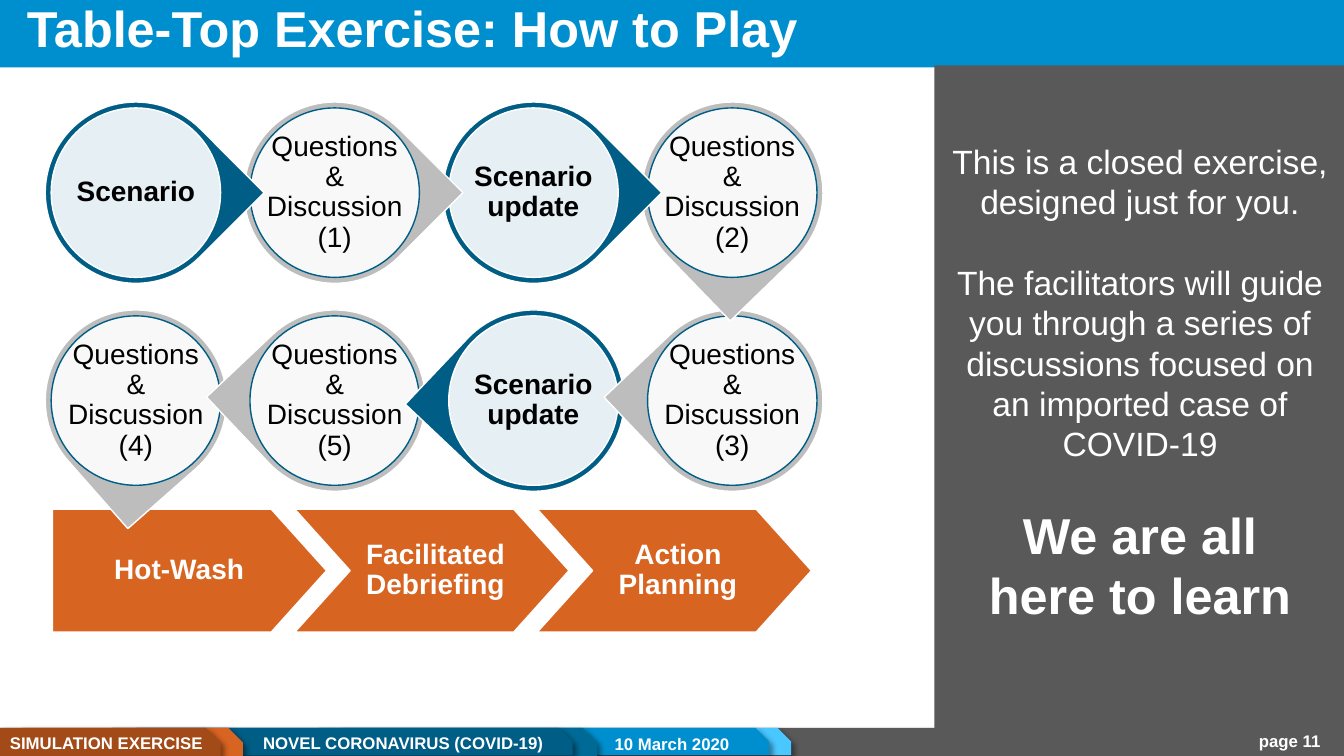
from pptx import Presentation
from pptx import util as u
from pptx.dml.color import RGBColor
from pptx.enum import shapes, text
from pptx.oxml import parse_xml
from pptx.oxml.ns import nsdecls, qn

WHITE, BLACK, BLUE = "FFFFFF", "000000", "008FCE"
NAVY, SILVER, ORANGE, SLATE = "005D85", "BDBDBD", "D86422", "595959"
Kind, Align, Anchor = shapes.MSO_SHAPE, text.PP_ALIGN, text.MSO_ANCHOR

# Process grid, in cm
COLUMN_LEFT, COLUMN_STEP = 1.14, 5.01
ROW_TOPS = (2.57, 7.81)
DROP_SIZE, RING = 4.57, 0.15

# Row, column, rotation, wording; from back to front
STEPS = [
    (1, 0, 138.6, "Questions & Discussion (4)"),
    (1, 1, 226.6, "Questions & Discussion (5)"),
    (1, 2, 223.4, "Scenario update"),
    (1, 3, 226.5, "Questions & Discussion (3)"),
    (0, 3, 135.9, "Questions & Discussion (2)"),
    (0, 2, 45, "Scenario update"),
    (0, 1, 45, "Questions & Discussion (1)"),
    (0, 0, 45, "Scenario"),
]
FOLLOW_UP = ["Hot-Wash", "Facilitated Debriefing", "Action Planning"]

# Left, width, height, colour; from back to front
FOOTER_TABS = [
    (8.59, 11.35, 0.69, "49C7FF"),
    (8.03, 11.35, 0.69, BLUE),
    (3.43, 11.61, 0.71, "006A97"),
    (2.82, 11.61, 0.69, NAVY),
    (0.56, 5.56, 0.74, ORANGE),
    (0, 5.56, 0.74, "A24B19"),
]
# Wording, space before in points, size, bold
PANEL_TEXT = [
    ("This is a closed exercise, designed just for you.", 0, 24, False),
    ("The facilitators will guide you through a series of discussions "
     "focused on an imported case of", 28.8, 24, False),
    ("COVID-19", 0, 24, False),
    ("We are all", 28.8, 36, True),
    ("here to learn", 0, 36, True),
]


def colour(value):
    return RGBColor.from_string(value)


def apply(target, formats):
    for name, value in formats.items():
        setattr(target, name, value)


def write(para, wording, size, shade=WHITE, bold=True, **formats):
    span = para.add_run()
    span.text = wording
    apply(span.font, {"name": "Arial", "size": u.Pt(size), "bold": bold})
    span.font.color.rgb = colour(shade)
    apply(para, formats)


def set_frame(frame, margins=(0.25, 0.13, 0.25, 0.13), **formats):
    sides = ("margin_left", "margin_top", "margin_right", "margin_bottom")
    apply(frame, {side: u.Cm(size) for side, size in zip(sides, margins)})
    apply(frame, {"word_wrap": True, "auto_size": text.MSO_AUTO_SIZE.NONE,
                  **formats})


def add_figure(page, kind, area, fill, line=None):
    figure = page.shapes.add_shape(kind, *map(u.Cm, area))
    figure.shadow.inherit = False
    figure.fill.solid()
    figure.fill.fore_color.rgb = colour(fill)
    if line:
        figure.line.color.rgb = colour(line)
        figure.line.width = u.Pt(1)
    else:
        figure.line.fill.background()
    return figure


def add_soft_shadow(figure):
    effects = figure.element.spPr.find(qn("a:effectLst"))
    effects.append(parse_xml(
        f'<a:outerShdw {nsdecls("a")} blurRad="50800" dist="38100" dir="2700000">'
        '<a:srgbClr val="000000"><a:alpha val="40000"/></a:srgbClr>'
        '</a:outerShdw>'))


def add_label(page, area, wording, align=Align.LEFT, **frame_formats):
    box = page.shapes.add_textbox(*map(u.Cm, area))
    set_frame(box.text_frame, **frame_formats)
    write(box.text_frame.paragraphs[0], wording, 12, alignment=align)


def write_step(figure, wording, margins, shade, bold):
    set_frame(figure.text_frame, margins, vertical_anchor=Anchor.MIDDLE)
    write(figure.text_frame.paragraphs[0], wording, 20, shade, bold,
          alignment=Align.CENTER, line_spacing=0.9)


def add_step(page, row, column, rotation, wording):
    is_scenario = wording.startswith("Scenario")
    left, top = COLUMN_LEFT + column * COLUMN_STEP, ROW_TOPS[row]
    drop = add_figure(page, Kind.TEAR, (left, top, DROP_SIZE, DROP_SIZE),
                      NAVY if is_scenario else SILVER, WHITE)
    drop.rotation = rotation
    inner = DROP_SIZE - 2 * RING
    disc = add_figure(page, Kind.OVAL, (left + RING, top + RING, inner, inner),
                      WHITE, WHITE if is_scenario else NAVY)
    tint = disc.element.spPr.find(qn("a:solidFill"))[0]
    tint.append(parse_xml(f'<a:alpha {nsdecls("a")} val="90000"/>'))
    # Negative side margins let the words use the full width of the disc
    write_step(disc, wording, (-0.34, 0, -0.34, 0), BLACK, is_scenario)


def add_follow_up(page, index, wording):
    kind = Kind.CHEVRON if index else Kind.PENTAGON
    arrow = add_figure(page, kind, (1.32 + 6.11 * index, 12.83, 6.91, 3.1),
                       ORANGE, WHITE)
    arrow.adjustments[0] = 0.45
    margins = (0.3, 0.18, 0.12, 0.18) if index else (0.36, 0.18, 0.18, 0.18)
    write_step(arrow, wording, margins, WHITE, True)


def add_title(page):
    add_figure(page, Kind.RECTANGLE, (0, 0, 33.87, 1.7), BLUE)
    title = page.shapes.title
    title.element.getparent().append(title.element)  # in front of the band
    area = zip(("left", "top", "width", "height"), (0.43, -0.03, 29.21, 1.63))
    apply(title, {side: u.Cm(size) for side, size in area})
    set_frame(title.text_frame, vertical_anchor=Anchor.MIDDLE)
    write(title.text_frame.paragraphs[0], "Table-Top Exercise: How to Play", 36,
          alignment=Align.LEFT, line_spacing=0.9)


def add_footer(page):
    bar = add_figure(page, Kind.RECTANGLE, (0, 18.34, 33.87, 0.71), SLATE)
    add_soft_shadow(bar)
    for left, width, height, fill in FOOTER_TABS:
        tab = add_figure(page, Kind.SNIP_1_RECTANGLE,
                         (left, 18.34, width, height), fill)
        tab.adjustments[0] = 0.5
        add_soft_shadow(tab)
    add_label(page, (0, 18.34, 5.44, 0.76), "SIMULATION EXERCISE",
              word_wrap=False)
    add_label(page, (6.38, 18.34, 10.67, 0.76), "NOVEL CORONAVIRUS (COVID-19)")
    add_label(page, (28.98, 18.29, 4.55, 0.76), "page 11", Align.RIGHT)
    add_label(page, (15.24, 18.24, 10.46, 1.02), "10 March 2020",
              vertical_anchor=Anchor.MIDDLE)


def add_panel(page):
    panel = add_figure(page, Kind.RECTANGLE, (23.55, 1.65, 10.36, 16.81), SLATE)
    frame = panel.text_frame
    set_frame(frame, (0.25, 1.9, 0.25, 0.13), vertical_anchor=Anchor.TOP)
    for index, (wording, gap, size, bold) in enumerate(PANEL_TEXT):
        para = frame.add_paragraph() if index else frame.paragraphs[0]
        write(para, wording, size, bold=bold, alignment=Align.CENTER,
              space_before=u.Pt(gap))


def main():
    deck = Presentation()
    deck.slide_width, deck.slide_height = u.Cm(33.87), u.Cm(19.05)
    page = deck.slides.add_slide(deck.slide_layouts[5])  # title only
    add_title(page)
    add_footer(page)
    add_panel(page)
    for index, wording in enumerate(FOLLOW_UP):
        add_follow_up(page, index, wording)
    for step in STEPS:
        add_step(page, *step)
    deck.save("out.pptx")


if __name__ == "__main__":
    main()
